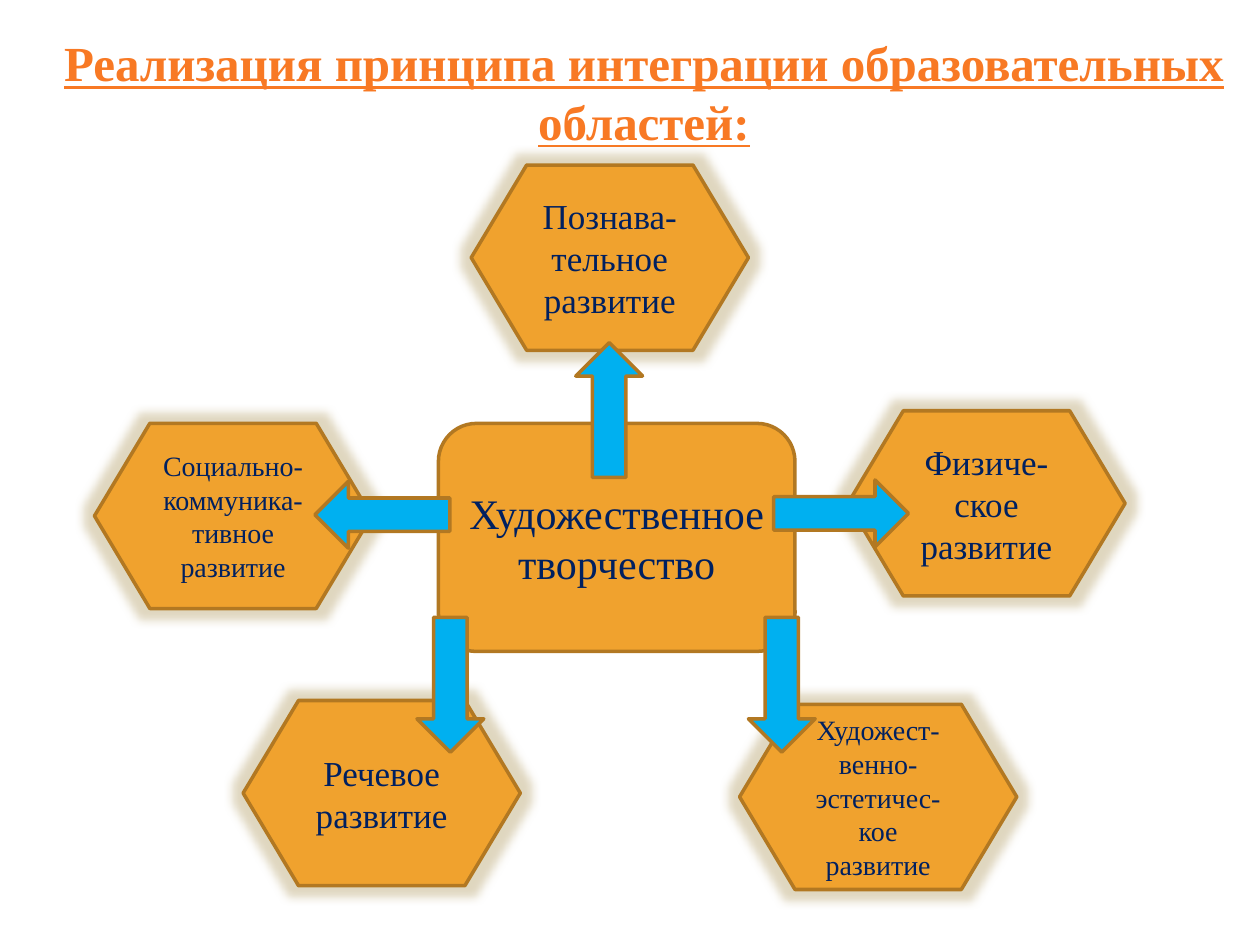
import pptx
import pptx.util
import pptx.dml.color
import pptx.enum.shapes
import pptx.enum.text
import pptx.oxml
import pptx.oxml.ns

SHAPE = pptx.enum.shapes.MSO_SHAPE
ALIGN = pptx.enum.text.PP_ALIGN
ANCHOR = pptx.enum.text.MSO_ANCHOR

HEADING = "Реализация принципа интеграции образовательных областей:"
HEADING_BOX = (51.1, 12.87, 99.8, 20.13)

HUB = ("Художественное творчество", 48.95, 56.87)
HUB_SIZE = (28.3, 24.13)

AREAS = [
    (["Познава- тельное развитие"], "area", 48.4, 27.27),
    (["Физиче- ское развитие"], "area", 78.3, 53.27),
    (["Социально-коммуника-тивное развитие"], "long_area", 18.5, 54.6),
    (["Речевое развитие"], "area", 30.3, 83.93),
    (["Художест-", "венно-эстетичес-", "кое развитие"], "long_area", 69.7, 84.33),
]
AREA_SIZE = (22, 19.6)

UPRIGHT, LEVEL = (5.3, 14.27), (10.7, 7.07)
ARROWS = [
    (SHAPE.UP_ARROW, 48.35, 43.4, UPRIGHT),
    (SHAPE.RIGHT_ARROW, 66.75, 54.33, LEVEL),
    (SHAPE.DOWN_ARROW, 35.75, 72.47, UPRIGHT),
    (SHAPE.DOWN_ARROW, 62.05, 72.47, UPRIGHT),
    (SHAPE.LEFT_ARROW, 30.35, 54.47, LEVEL),
]

THEME = {
    "font": "Times New Roman",
    "colors": {"heading": "F87924", "tile": "F0A22E", "edge": "B27822",
               "arrow": "00B0F0", "text": "002060", "glow": "B19B61"},
    "sizes": {"heading": 28, "hub": 24, "area": 20, "long_area": 16},
    "edge_width": 2,
    "glow_radius": 11,
    "glow_alpha": 40000,
}

deck = pptx.Presentation()
deck.slide_width = pptx.util.Inches(10)
deck.slide_height = pptx.util.Inches(7.5)
slide = deck.slides.add_slide(deck.slide_layouts[5])


def color(role):
    return pptx.dml.color.RGBColor.from_string(THEME["colors"][role])


def centered_box(x, y, width, height):
    across, down = deck.slide_width / 100, deck.slide_height / 100
    return (round((x - width / 2) * across), round((y - height / 2) * down),
            round(width * across), round(height * down))


def write(frame, lines, size, ink="text", anchor=ANCHOR.MIDDLE):
    frame.word_wrap = True
    frame.auto_size = pptx.enum.text.MSO_AUTO_SIZE.NONE
    frame.vertical_anchor = anchor
    frame.text = "\n".join(lines)
    for paragraph in frame.paragraphs:
        paragraph.alignment = ALIGN.CENTER
        paragraph.font.name = THEME["font"]
        paragraph.font.size = pptx.util.Pt(THEME["sizes"][size])
        paragraph.font.color.rgb = color(ink)


def add_block(kind, x, y, size, fill):
    block = slide.shapes.add_shape(kind, *centered_box(x, y, *size))
    block.shadow.inherit = False
    block.fill.solid()
    block.fill.fore_color.rgb = color(fill)
    block.line.color.rgb = color("edge")
    block.line.width = pptx.util.Pt(THEME["edge_width"])
    return block


def add_glow(block):
    effects = block.element.spPr.find(pptx.oxml.ns.qn("a:effectLst"))
    effects.append(pptx.oxml.parse_xml(
        f'<a:glow {pptx.oxml.ns.nsdecls("a")} rad="{pptx.util.Pt(THEME["glow_radius"])}">'
        f'<a:srgbClr val="{THEME["colors"]["glow"]}">'
        f'<a:alpha val="{THEME["glow_alpha"]}"/></a:srgbClr></a:glow>'))


heading = slide.shapes.title
heading.left, heading.top, heading.width, heading.height = centered_box(*HEADING_BOX)
write(heading.text_frame, [HEADING], "heading", "heading", ANCHOR.TOP)
heading_font = heading.text_frame.paragraphs[0].font
heading_font.bold = True
heading_font.underline = True

for lines, size, x, y in AREAS:
    area = add_block(SHAPE.FLOWCHART_PREPARATION, x, y, AREA_SIZE, "tile")
    add_glow(area)
    write(area.text_frame, lines, size)

hub_text, hub_x, hub_y = HUB
hub = add_block(SHAPE.ROUNDED_RECTANGLE, hub_x, hub_y, HUB_SIZE, "tile")
write(hub.text_frame, [hub_text], "hub")

for direction, x, y, size in ARROWS:
    add_block(direction, x, y, size, "arrow")

deck.save("out.pptx")
